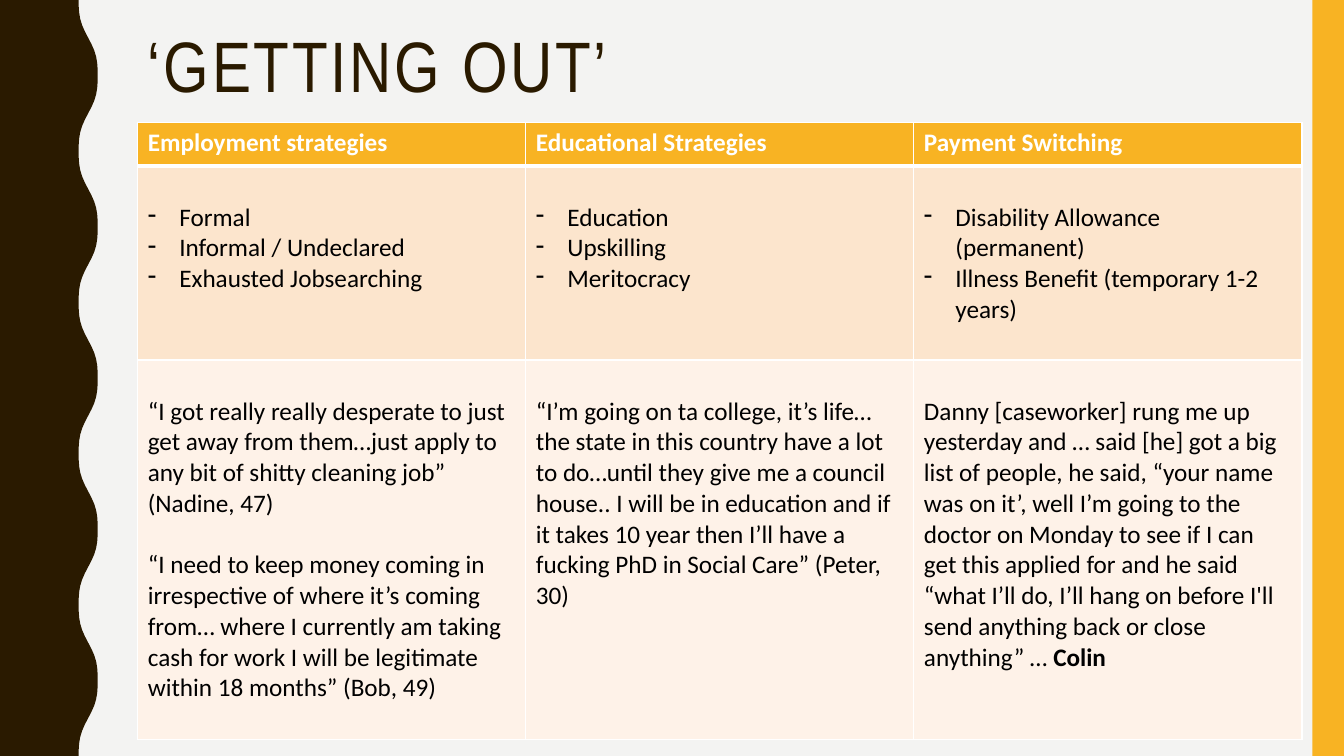
import dataclasses
import math

import lxml.etree
import pptx
import pptx.dml.color
import pptx.enum.shapes
import pptx.enum.text
import pptx.oxml.ns
import pptx.util

# The grid has square cells, twelve to the inch.
COLUMNS, ROWS = 160, 90
CELL = pptx.util.Inches(1) // 12

BROWN, GOLD, WHITE, BLACK = "2A1A00", "F8B323", "FFFFFF", "000000"
PAPER, PEACH, CREAM = "F3F3F2", "FCE5CD", "FEF2E8"
TITLE_FONT, BODY_FONT = "Arial Narrow", "Calibri"
BODY_SIZE = 18
BLANK_LINE = 22  # points
HANGING = 3.75  # grid columns


@dataclasses.dataclass(frozen=True)
class Strategy:
    heading: str
    examples: list[str]
    quotes: list[str]
    speaker: str = ""


@dataclasses.dataclass(frozen=True)
class Band:
    """One row of the table: its height in grid rows and its look."""
    height: float
    fill: str
    ink: str
    top_line: int
    bottom_line: int
    top_margin: float = 0.6


STRATEGIES = [
    Strategy(
        "Employment strategies",
        ["Formal", "Informal / Undeclared", "Exhausted Jobsearching"],
        ["“I got really really desperate to just get away from them…just apply to "
         "any bit of shitty cleaning job” (Nadine, 47)",
         "“I need to keep money coming in irrespective of where it’s coming from… "
         "where I currently am taking cash for work I will be legitimate within "
         "18 months” (Bob, 49)"]),
    Strategy(
        "Educational Strategies",
        ["Education", "Upskilling", "Meritocracy"],
        ["“I’m going on ta college, it’s life…the state in this country have a lot "
         "to do…until they give me a council house.. I will be in education and if "
         "it takes 10 year then I’ll have a fucking PhD in Social Care” (Peter, 30)"]),
    Strategy(
        "Payment Switching",
        ["Disability Allowance (permanent)", "Illness Benefit (temporary 1-2 years)"],
        ["Danny [caseworker] rung me up yesterday and … said [he] got a big list of "
         "people, he said, “your name was on it’, well I’m going to the doctor on "
         "Monday to see if I can get this applied for and he said “what I’ll do, "
         "I’ll hang on before I'll send anything back or close anything” … "],
        speaker="Colin"),
]

HEADER = Band(5.16, GOLD, WHITE, 1, 3)
EXAMPLES = Band(23.1, PEACH, BLACK, 3, 1, top_margin=4.3)
QUOTES = Band(45.2, CREAM, BLACK, 1, 1, top_margin=4.3)


def grid(count: float) -> int:
    """Length of a number of grid cells."""
    return round(count * CELL)


def colour(code: str) -> pptx.dml.color.RGBColor:
    return pptx.dml.color.RGBColor.from_string(code)


def paint(shape, code: str) -> None:
    """Flat fill with neither outline nor shadow."""
    shape.fill.solid()
    shape.fill.fore_color.rgb = colour(code)
    shape.line.fill.background()
    shape.shadow.inherit = False


def style(span, face: str, size: float, ink: str, bold: bool = False) -> None:
    span.font.name = face
    span.font.size = pptx.util.Pt(size)
    span.font.color.rgb = colour(ink)
    span.font.bold = bold


def add_wavy_edge(page) -> None:
    period, steps = 18, 24

    def edge(row: float) -> float:
        angle = 2 * math.pi * row / period
        return 10.5 - 1.24 * math.cos(angle) + 0.1 * math.cos(3 * angle)

    rows = [step * period / steps for step in range(ROWS * steps // period + 1)]
    builder = page.shapes.build_freeform(0, 0, scale=1.0)
    points = [(grid(edge(row)), grid(row)) for row in rows]
    builder.add_line_segments(points + [(0, grid(ROWS))], close=True)
    paint(builder.convert_to_shape(), BROWN)


def add_side_bar(page) -> None:
    width = 3.75
    bar = page.shapes.add_shape(
        pptx.enum.shapes.MSO_SHAPE.RECTANGLE,
        grid(COLUMNS - width), 0, grid(width), grid(ROWS))
    paint(bar, GOLD)


def add_title(page, text: str) -> None:
    box = page.shapes.add_textbox(grid(16.44), grid(3.12), grid(133.56), grid(19.56))
    box.text_frame.word_wrap = True
    box.text_frame.vertical_anchor = pptx.enum.text.MSO_ANCHOR.TOP
    para = box.text_frame.paragraphs[0]
    para.text = text
    para.line_spacing = 0.9
    span = para.runs[0]
    style(span, TITLE_FONT, 51, BROWN)
    span.font._element.set("spc", "200")


def draw_borders(cell, band: Band) -> None:
    properties = cell._tc.get_or_add_tcPr()
    qn = pptx.oxml.ns.qn
    widths = {"lnL": 1, "lnR": 1, "lnT": band.top_line, "lnB": band.bottom_line}
    for place, (side, width) in enumerate(widths.items()):
        line = lxml.etree.Element(qn(f"a:{side}"), w=str(pptx.util.Pt(width)))
        fill = lxml.etree.SubElement(line, qn("a:solidFill"))
        lxml.etree.SubElement(fill, qn("a:srgbClr"), val=WHITE)
        properties.insert(place, line)


def add_dash(para) -> None:
    properties = para._p.get_or_add_pPr()
    properties.set("marL", str(grid(HANGING)))
    properties.set("indent", str(-grid(HANGING)))
    lxml.etree.SubElement(properties, pptx.oxml.ns.qn("a:buChar"), char="-")


def fill_cell(cell, band: Band, lines: list[str], bold: bool = False) -> list:
    """Write the lines into the cell and return its paragraphs."""
    cell.fill.solid()
    cell.fill.fore_color.rgb = colour(band.fill)
    cell.margin_top = grid(band.top_margin)
    draw_borders(cell, band)
    cell.text_frame.text = "\n".join(lines)
    paras = list(cell.text_frame.paragraphs)
    for para in paras:
        style(para.runs[0], BODY_FONT, BODY_SIZE, band.ink, bold)
    return paras


def add_strategy_table(page) -> None:
    bands = [HEADER, EXAMPLES, QUOTES]
    width = 46.2
    table = page.shapes.add_table(
        len(bands), len(STRATEGIES), grid(16.4), grid(14.6),
        grid(width * len(STRATEGIES)), grid(sum(band.height for band in bands))).table
    for row, band in zip(table.rows, bands):
        row.height = grid(band.height)
    for index, strategy in enumerate(STRATEGIES):
        table.columns[index].width = grid(width)
        fill_cell(table.cell(0, index), HEADER, [strategy.heading], bold=True)
        for para in fill_cell(table.cell(1, index), EXAMPLES, strategy.examples):
            add_dash(para)
        quotes = fill_cell(table.cell(2, index), QUOTES, strategy.quotes)
        for para in quotes[1:]:
            para.space_before = pptx.util.Pt(BLANK_LINE)
        if strategy.speaker:
            span = quotes[-1].add_run()
            span.text = strategy.speaker
            style(span, BODY_FONT, BODY_SIZE, BLACK, bold=True)


def main() -> None:
    deck = pptx.Presentation()
    deck.slide_width, deck.slide_height = grid(COLUMNS), grid(ROWS)
    page = deck.slides.add_slide(deck.slide_layouts[6])
    page.background.fill.solid()
    page.background.fill.fore_color.rgb = colour(PAPER)
    add_wavy_edge(page)
    add_side_bar(page)
    add_title(page, "‘GETTING OUT’")
    add_strategy_table(page)
    deck.save("out.pptx")


if __name__ == "__main__":
    main()
